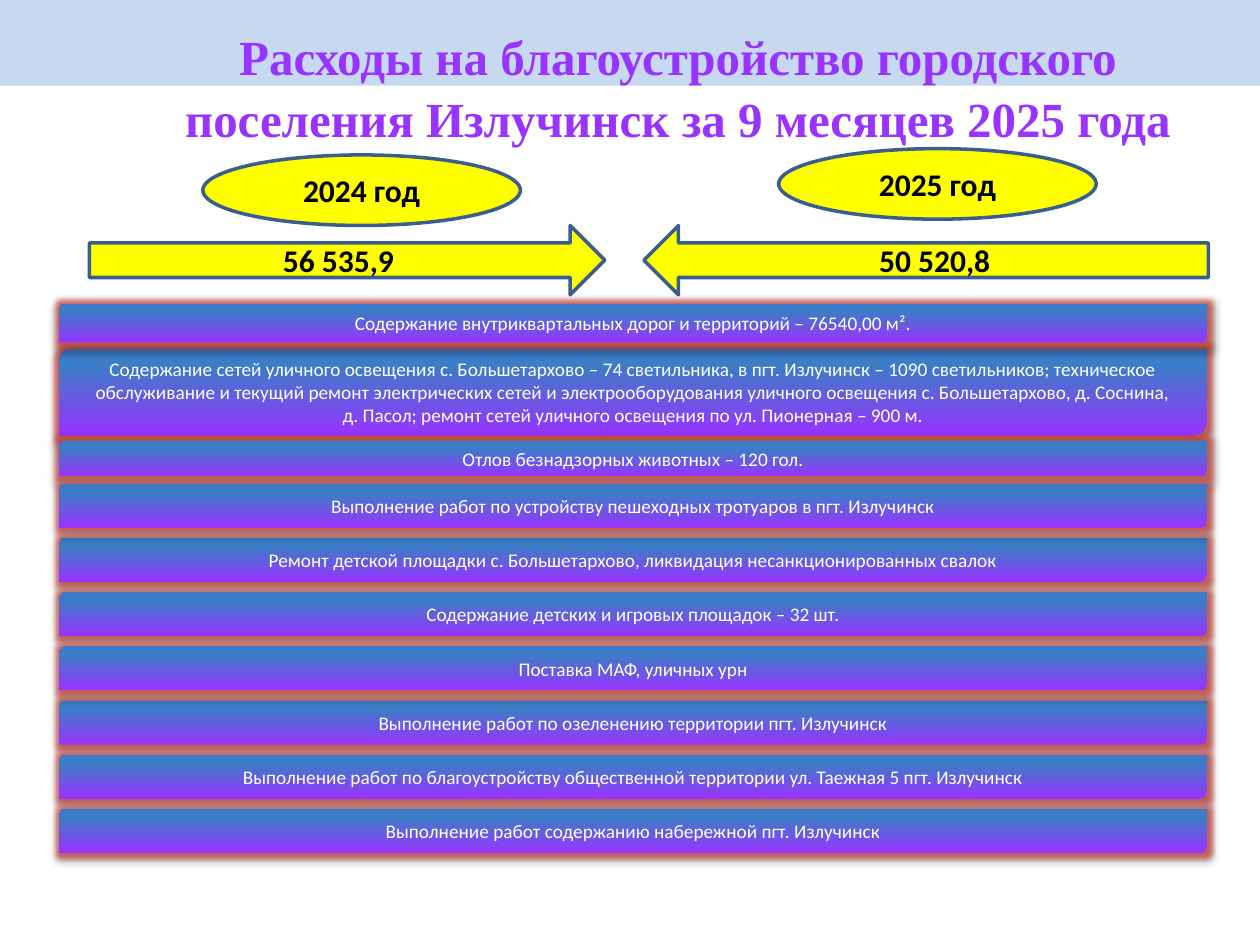
from dataclasses import dataclass

from lxml.etree import SubElement
from pptx import Presentation
from pptx.dml.color import RGBColor as Rgb
from pptx.enum.shapes import MSO_SHAPE as Geo
from pptx.enum.text import MSO_ANCHOR as Anchor, PP_ALIGN as Align
from pptx.oxml.ns import qn
from pptx.util import Inches, Pt


@dataclass(frozen=True)
class Theme:
    band: str = "C6D9F1"
    title: str = "9933FF"
    year_fill: str = "FFFF00"
    year_line: str = "3A5F8C"
    year_text: str = "000000"
    work_text: str = "FFFFFF"
    glow: str = "C8443C"
    shade: str = "000000"
    gradient: tuple = ((0, "9933FF"), (80, "3D7CC7"), (100, "3A7CCB"))
    title_font: str = "Times New Roman"
    body_font: str = "Calibri"
    title_size: int = 28
    year_size: int = 18
    work_size: int = 11


THEME = Theme()
WIDTH, HEIGHT = 10, 7.5
WORK_LEFT, WORK_WIDTH = 0.47, 9.11
GRID_TOP, ROW_PITCH, ROW_HEIGHT = 3.84, 0.43, 0.35
FIRST_ROWS = ((2.41, 0.31), (2.76, 0.7), (3.5, 0.28))
BACK_TO_FRONT = (1, 0, 4, 2, 5, 7, 8, 3, 6, 9)

YEARS = (
    ("2024 год", (1.61, 1.23), "56 535,9", Geo.RIGHT_ARROW, 0.71, 4.09),
    ("2025 год", (6.18, 1.18), "50 520,8", Geo.LEFT_ARROW, 5.11, 4.48),
)
WORKS = (
    "Содержание внутриквартальных дорог и территорий – 76540,00 м².",
    "Содержание сетей уличного освещения с. Большетархово – 74 светильника, "
    "в пгт. Излучинск – 1090 светильников; техническое обслуживание и текущий "
    "ремонт электрических сетей и электрооборудования уличного освещения "
    "с. Большетархово, д. Соснина,\vд. Пасол; ремонт сетей уличного освещения "
    "по ул. Пионерная – 900 м.",
    "Отлов безнадзорных животных – 120 гол.",
    "Выполнение работ по устройству пешеходных тротуаров в пгт. Излучинск",
    "Ремонт детской площадки с. Большетархово, ликвидация несанкционированных свалок",
    "Содержание детских и игровых площадок – 32 шт.",
    "Поставка МАФ, уличных урн",
    "Выполнение работ по озеленению территории пгт. Излучинск",
    "Выполнение работ по благоустройству общественной территории ул. Таежная 5 пгт. Излучинск",
    "Выполнение работ содержанию набережной пгт. Излучинск",
)


def write(holder, text, font_name, size, color, bold=False, anchor=Anchor.MIDDLE):
    frame = holder.text_frame
    frame.word_wrap = True
    frame.vertical_anchor = anchor
    frame.text = text
    paragraph = frame.paragraphs[0]
    paragraph.alignment = Align.CENTER
    font = paragraph.font
    font.name, font.size, font.bold = font_name, Pt(size), bold
    font.color.rgb = Rgb.from_string(color)
    return paragraph


def add_figure(slide, geometry, box):
    figure = slide.shapes.add_shape(geometry, *map(Inches, box))
    figure.shadow.inherit = False
    figure.line.fill.background()
    return figure


def add_band(slide):
    band = add_figure(slide, Geo.RECTANGLE, (0, 0, WIDTH, 0.68))
    band.fill.solid()
    band.fill.fore_color.rgb = Rgb.from_string(THEME.band)


def add_title(slide, text):
    title = slide.shapes.add_textbox(*map(Inches, (0.88, 0.14, 9, 1.25)))
    paragraph = write(title, text, THEME.title_font, THEME.title_size,
                      THEME.title, bold=True, anchor=Anchor.TOP)
    paragraph.line_spacing = 1.05


def add_year_figure(slide, geometry, box, text):
    figure = add_figure(slide, geometry, box)
    figure.fill.solid()
    figure.fill.fore_color.rgb = Rgb.from_string(THEME.year_fill)
    figure.line.color.rgb = Rgb.from_string(THEME.year_line)
    figure.line.width = Pt(2)
    write(figure, text, THEME.body_font, THEME.year_size, THEME.year_text, bold=True)


def add_color(parent, color, alpha=100):
    tint = SubElement(parent, qn("a:srgbClr"), val=color)
    if alpha < 100:
        SubElement(tint, qn("a:alpha"), val=str(alpha * 1000))


def paint_gradient(figure):
    figure.fill.gradient()
    figure.fill.gradient_angle = 90
    stops = figure._element.spPr.find(qn("a:gradFill")).find(qn("a:gsLst"))
    for old_stop in list(stops):
        stops.remove(old_stop)
    for position, color in THEME.gradient:
        add_color(SubElement(stops, qn("a:gs"), pos=str(position * 1000)), color)


def add_glow_and_shadow(figure):
    effects = figure._element.spPr.find(qn("a:effectLst"))
    add_color(SubElement(effects, qn("a:glow"), rad=str(Pt(5))), THEME.glow, 75)
    shadow = SubElement(effects, qn("a:outerShdw"), blurRad=str(Pt(3.1)),
                        dist=str(Pt(1.8)), dir="5400000", rotWithShape="0")
    add_color(shadow, THEME.shade, 35)


def work_row(index):
    if index < len(FIRST_ROWS):
        return FIRST_ROWS[index]
    return GRID_TOP + (index - len(FIRST_ROWS)) * ROW_PITCH, ROW_HEIGHT


def add_work(slide, index):
    top, height = work_row(index)
    bar = add_figure(slide, Geo.ROUND_2_DIAG_RECTANGLE,
                     (WORK_LEFT, top, WORK_WIDTH, height))
    paint_gradient(bar)
    add_glow_and_shadow(bar)
    write(bar, WORKS[index], THEME.body_font, THEME.work_size, THEME.work_text)


def main():
    deck = Presentation()
    deck.slide_width, deck.slide_height = Inches(WIDTH), Inches(HEIGHT)
    slide = deck.slides.add_slide(deck.slide_layouts[6])
    add_band(slide)
    add_title(slide, "Расходы на благоустройство городского поселения "
                     "Излучинск за 9 месяцев 2025 года")
    for year, corner, amount, arrow, left, length in YEARS:
        add_year_figure(slide, arrow, (left, 1.79, length, 0.55), amount)
        add_year_figure(slide, Geo.OVAL, (*corner, 2.52, 0.56), year)
    for index in BACK_TO_FRONT:
        add_work(slide, index)
    deck.save("out.pptx")


if __name__ == "__main__":
    main()
